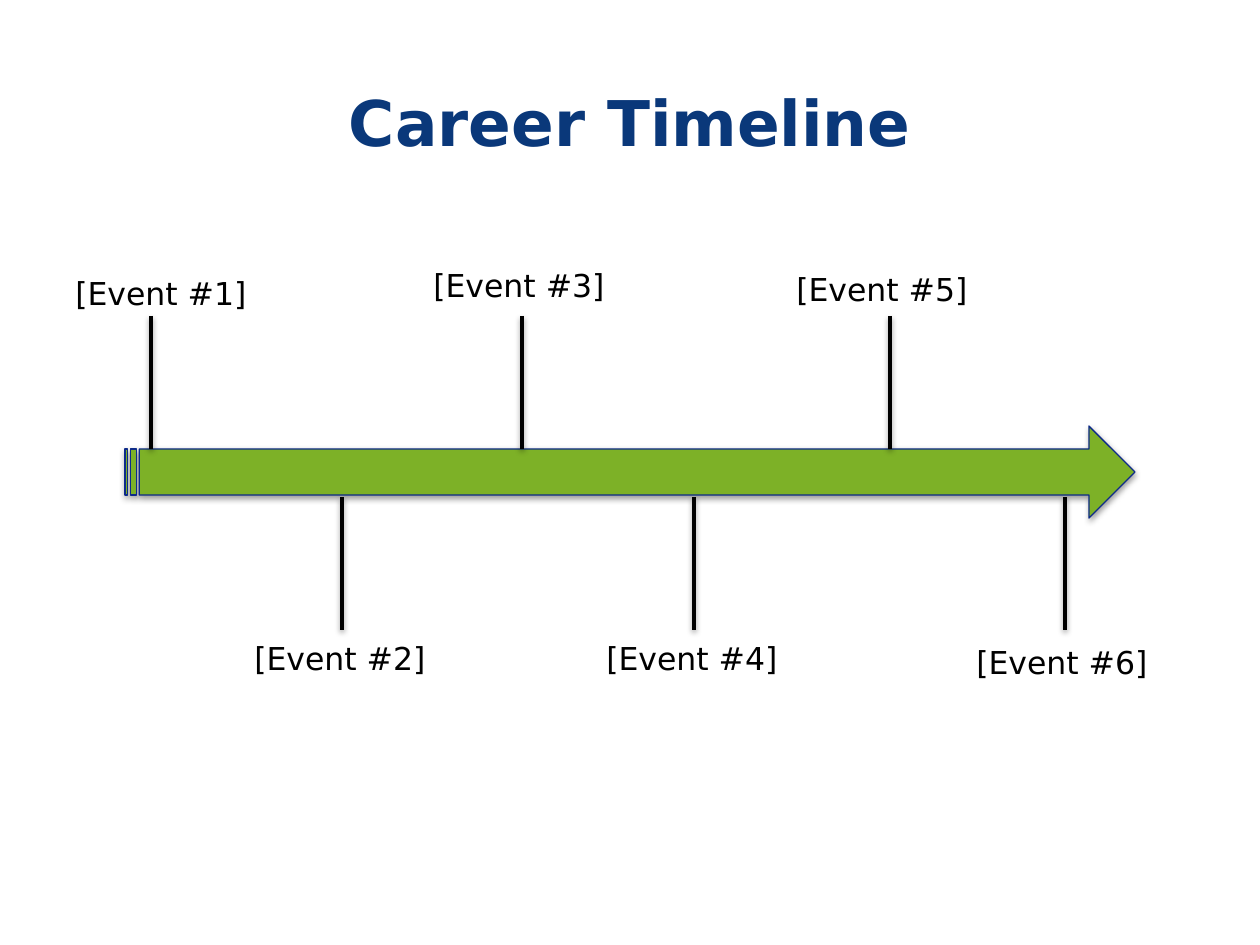
import pptx
import pptx.dml.color
import pptx.enum.shapes
import pptx.enum.text
import pptx.oxml
import pptx.oxml.ns
import pptx.util

PX = 914400 / 126
FONT = "DejaVu Sans"
SHADOW = (
    f'<a:effectLst {pptx.oxml.ns.nsdecls("a")}>'
    '<a:outerShdw blurRad="39400" dist="20300" dir="5400000" rotWithShape="0">'
    '<a:srgbClr val="000000"><a:alpha val="38000"/></a:srgbClr>'
    '</a:outerShdw></a:effectLst>'
)


def px(*lengths):
    return [pptx.util.Emu(round(length * PX)) for length in lengths]


def color(value):
    return pptx.dml.color.RGBColor.from_string(value)


presentation = pptx.Presentation()
presentation.slide_width, presentation.slide_height = px(1260, 945)
slide = presentation.slides.add_slide(presentation.slide_layouts[6])
shapes = slide.shapes

title = shapes.add_textbox(*px(63, 43, 1134, 157))
title.text_frame.word_wrap = True
title.text_frame.vertical_anchor = pptx.enum.text.MSO_ANCHOR.MIDDLE
paragraph = title.text_frame.paragraphs[0]
paragraph.text = "Career Timeline"
paragraph.alignment = pptx.enum.text.PP_ALIGN.CENTER
title_format = {"name": FONT, "size": pptx.util.Pt(36), "bold": True}
for attribute, value in title_format.items():
    setattr(paragraph.font, attribute, value)
paragraph.font.color.rgb = color("0A387A")

arrow = shapes.add_shape(
    pptx.enum.shapes.MSO_SHAPE.STRIPED_RIGHT_ARROW, *px(125, 426, 1010, 92)
)
arrow.fill.solid()
arrow.fill.fore_color.rgb = color("7DB127")
arrow.line.color.rgb = color("0E2B89")
arrow.line.width = pptx.util.Pt(0.75)
arrow._element.spPr.append(pptx.oxml.parse_xml(SHADOW))

events = [
    (151, 63, 268, 217),
    (342, 242, 633, 202),
    (522, 421, 260, 202),
    (694, 594, 633, 202),
    (890, 784, 264, 202),
    (1065, 964, 637, 202),
]
label_format = {"name": FONT, "size": pptx.util.Pt(18)}

for number, (tick_x, label_x, label_y, label_width) in enumerate(events, 1):
    tick_top = 316 if number % 2 else 497
    tick = shapes.add_connector(
        pptx.enum.shapes.MSO_CONNECTOR.STRAIGHT,
        *px(tick_x, tick_top, tick_x, tick_top + 133),
    )
    tick.line.color.rgb = color("000000")
    tick.line.width = pptx.util.Pt(2)
    tick._element.spPr.append(pptx.oxml.parse_xml(SHADOW))

    label = shapes.add_textbox(*px(label_x, label_y, label_width, 51))
    label.text_frame.word_wrap = number == 1
    label.text_frame.auto_size = pptx.enum.text.MSO_AUTO_SIZE.SHAPE_TO_FIT_TEXT
    paragraph = label.text_frame.paragraphs[0]
    paragraph.text = f"[Event #{number}]"
    for attribute, value in label_format.items():
        setattr(paragraph.font, attribute, value)
    paragraph.font.color.rgb = color("000000")

presentation.save("out.pptx")
